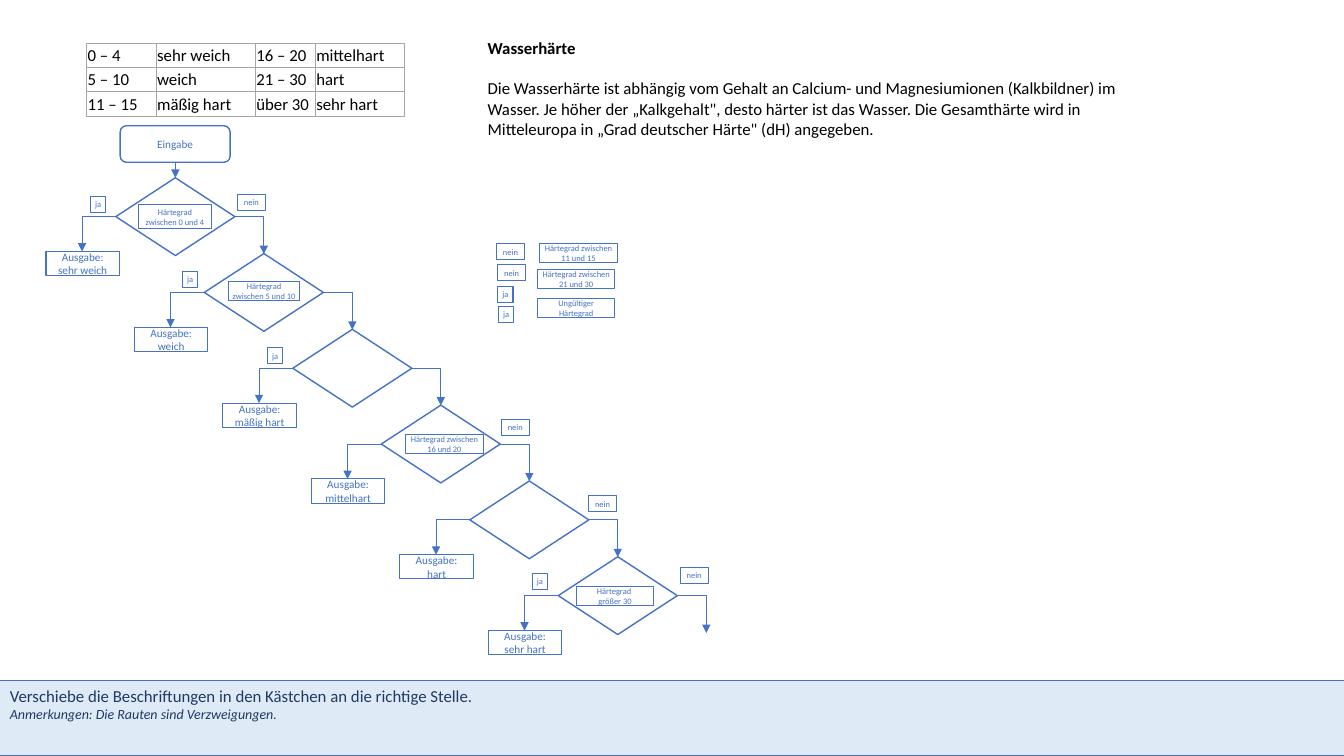
from lxml.etree import SubElement
from pptx import Presentation
from pptx.dml.color import RGBColor
from pptx.enum.shapes import MSO_CONNECTOR as Link, MSO_SHAPE as Form
from pptx.enum.text import MSO_ANCHOR as Anchor, MSO_AUTO_SIZE as AutoSize, PP_ALIGN as Align
from pptx.oxml.ns import qn
from pptx.util import Cm, Pt

BLUE = "4472C4"
BLACK = "000000"


def color(hex_string):
    return RGBColor.from_string(hex_string)


def apply(target, values):
    for name, value in values.items():
        setattr(target, name, value)


class Worksheet:
    font = "Calibri"
    tight = dict.fromkeys(
        ("margin_left", "margin_right", "margin_top", "margin_bottom"), Cm(0.1))

    def __init__(self, slide):
        self.slide = slide

    def put_text(self, paragraph, text, size, ink, style=None, layout=None):
        paragraph.text = text
        apply(paragraph, layout or {})
        for run in paragraph.runs:
            apply(run.font, {"name": self.font, "size": Pt(size), **(style or {})})
            run.font.color.rgb = color(ink)

    def shape(self, form, left, top, width, height, weight=0.75, fill=None):
        shape = self.slide.shapes.add_shape(
            form, Cm(left), Cm(top), Cm(width), Cm(height))
        shape.shadow.inherit = False
        if fill:
            shape.fill.solid()
            shape.fill.fore_color.rgb = color(fill)
        else:
            shape.fill.background()
        shape.line.color.rgb = color(BLUE)
        shape.line.width = Pt(weight)
        return shape

    def box(self, text, left, top, width, height, size=8, form=Form.RECTANGLE, weight=0.75):
        frame = self.shape(form, left, top, width, height, weight).text_frame
        apply(frame, {"word_wrap": True, "vertical_anchor": Anchor.MIDDLE})
        if size < 8:
            apply(frame, self.tight)
        self.put_text(frame.paragraphs[0], text, size, BLUE, layout={"alignment": Align.CENTER})

    def label(self, text, left, top, width=1.96, height=0.48):
        self.box(text, left, top, width, height, size=6)

    def answer(self, text, left, top):
        self.label(text, left, top, {"ja": 0.39, "nein": 0.71}[text], 0.41)

    def arrow(self, start, end, weight=0.75):
        bent = start[0] != end[0]
        arrow = self.slide.shapes.add_connector(
            Link.ELBOW if bent else Link.STRAIGHT, *map(Cm, start + end))
        arrow.line.color.rgb = color(BLUE)
        arrow.line.width = Pt(weight)
        properties = arrow._element.spPr
        if bent:
            properties.find(qn("a:prstGeom")).set("prst", "bentConnector2")
        SubElement(properties.find(qn("a:ln")), qn("a:tailEnd"), type="triangle")
        SubElement(properties, qn("a:effectLst"))

    def decision(self, left, top):
        width, height = 3, 1.96
        middle = top + height / 2
        self.shape(Form.FLOWCHART_DECISION, left, top, width, height, 1)
        self.arrow((left, middle), (left - 0.85, middle + 0.88))
        right = left + width
        self.arrow((right, middle), (right + 0.73, middle + 0.94))

    def paragraphs(self, frame, entries):
        frame.word_wrap = True
        for number, entry in enumerate(entries):
            paragraph = frame.add_paragraph() if number else frame.paragraphs[0]
            self.put_text(paragraph, *entry)

    def explanation(self, entries, left, top, width, height):
        frame = self.slide.shapes.add_textbox(
            Cm(left), Cm(top), Cm(width), Cm(height)).text_frame
        frame.auto_size = AutoSize.SHAPE_TO_FIT_TEXT
        self.paragraphs(frame, entries)

    def task(self, entries, left, top, width, height):
        frame = self.shape(Form.RECTANGLE, left, top, width, height, fill="DEEBF7").text_frame
        frame.vertical_anchor = Anchor.TOP
        self.paragraphs(
            frame, [entry + ({"alignment": Align.LEFT},) for entry in entries])

    def table(self, rows, left, top, widths, row_height):
        table = self.slide.shapes.add_table(
            len(rows), len(widths), Cm(left), Cm(top),
            Cm(sum(widths)), Cm(row_height * len(rows))).table
        apply(table, {"first_row": False, "horz_banding": False})
        for column, width in zip(table.columns, widths):
            column.width = Cm(width)
        for row, texts in zip(table.rows, rows):
            row.height = Cm(row_height)
            for cell, text in zip(row.cells, texts):
                apply(cell, dict.fromkeys(self.tight, Cm(0.03)))
                cell.vertical_anchor = Anchor.MIDDLE
                self.put_text(cell.text_frame.paragraphs[0], text, 12, BLACK,
                              layout={"line_spacing": 1.07, "space_after": Pt(8)})
                self.borders(cell)
                cell.fill.background()

    def borders(self, cell):
        for side in ("lnL", "lnR", "lnT", "lnB"):
            border = SubElement(cell._tc.get_or_add_tcPr(), qn(f"a:{side}"), w=str(Pt(0.25)))
            fill = SubElement(border, qn("a:solidFill"))
            SubElement(fill, qn("a:srgbClr"), val="A6A6A6")


def main():
    deck = Presentation()
    apply(deck, {"slide_width": Cm(33.87), "slide_height": Cm(19.05)})
    sheet = Worksheet(deck.slides.add_slide(deck.slide_layouts[6]))

    sheet.table([
        ("0 – 4", "sehr weich", "16 – 20", "mittelhart"),
        ("5 – 10", "weich", "21 – 30", "hart"),
        ("11 – 15", "mäßig hart", "über 30", "sehr hart"),
    ], 2.18, 1.08, (1.75, 2.5, 1.51, 2.25), 0.6)

    sheet.explanation([
        ("Wasserhärte", 12, BLACK, {"bold": True}, {"space_after": Pt(14.6)}),
        ("Die Wasserhärte ist abhängig vom Gehalt an Calcium- und Magnesiumionen "
         "(Kalkbildner) im Wasser. Je höher der „Kalkgehalt\", desto härter ist das "
         "Wasser. Die Gesamthärte wird in Mitteleuropa in „Grad deutscher Härte\" (dH) "
         "angegeben.", 12, BLACK),
    ], 12.04, 0.82, 17.07, 2.82)

    sheet.task([
        ("Verschiebe die Beschriftungen in den Kästchen an die richtige Stelle.",
         12, "203864", {}),
        ("Anmerkungen: Die Rauten sind Verzweigungen.", 10, "203864", {"italic": True}),
    ], 0, 17.15, 34.54, 1.9)

    sheet.box("Eingabe", 3.03, 3.17, 2.77, 0.92, form=Form.ROUNDED_RECTANGLE, weight=1)
    sheet.arrow((4.42, 4.09), (4.42, 4.48), 0.5)

    results = ("sehr weich", "weich", "mäßig hart", "mittelhart", "hart", "sehr hart")
    for step, result in enumerate(results):
        left, top = 2.92 + 2.23 * step, 4.48 + 1.91 * step
        sheet.decision(left, top)
        sheet.box(f"Ausgabe: {result}", left - 1.76, top + 1.86, 1.85, 0.61)

    sheet.label("Härtegrad zwischen 0 und 4", 3.49, 5.16, 1.84, 0.61)
    sheet.label("Härtegrad zwischen 5 und 10", 5.76, 7.1, 1.79)
    for condition, left, top in (
        ("Härtegrad zwischen 16 und 20", 10.22, 10.95),
        ("Härtegrad \vgrößer 30", 14.52, 14.78),
        ("Härtegrad zwischen 11 und 15", 13.6, 6.13),
        ("Härtegrad zwischen 21 und 30", 13.54, 6.79),
        ("Ungültiger Härtegrad", 13.54, 7.52),
    ):
        sheet.label(condition, left, top)

    answers = {
        "ja": ((2.28, 4.95), (4.6, 6.84), (6.74, 8.76), (13.41, 14.45),
               (12.54, 7.22), (12.56, 7.72)),
        "nein": ((5.98, 4.9), (12.63, 10.57), (14.83, 12.49), (17.14, 14.3),
                 (12.51, 6.14), (12.54, 6.67)),
    }
    for text, places in answers.items():
        for place in places:
            sheet.answer(text, *place)

    deck.save("out.pptx")


if __name__ == "__main__":
    main()
